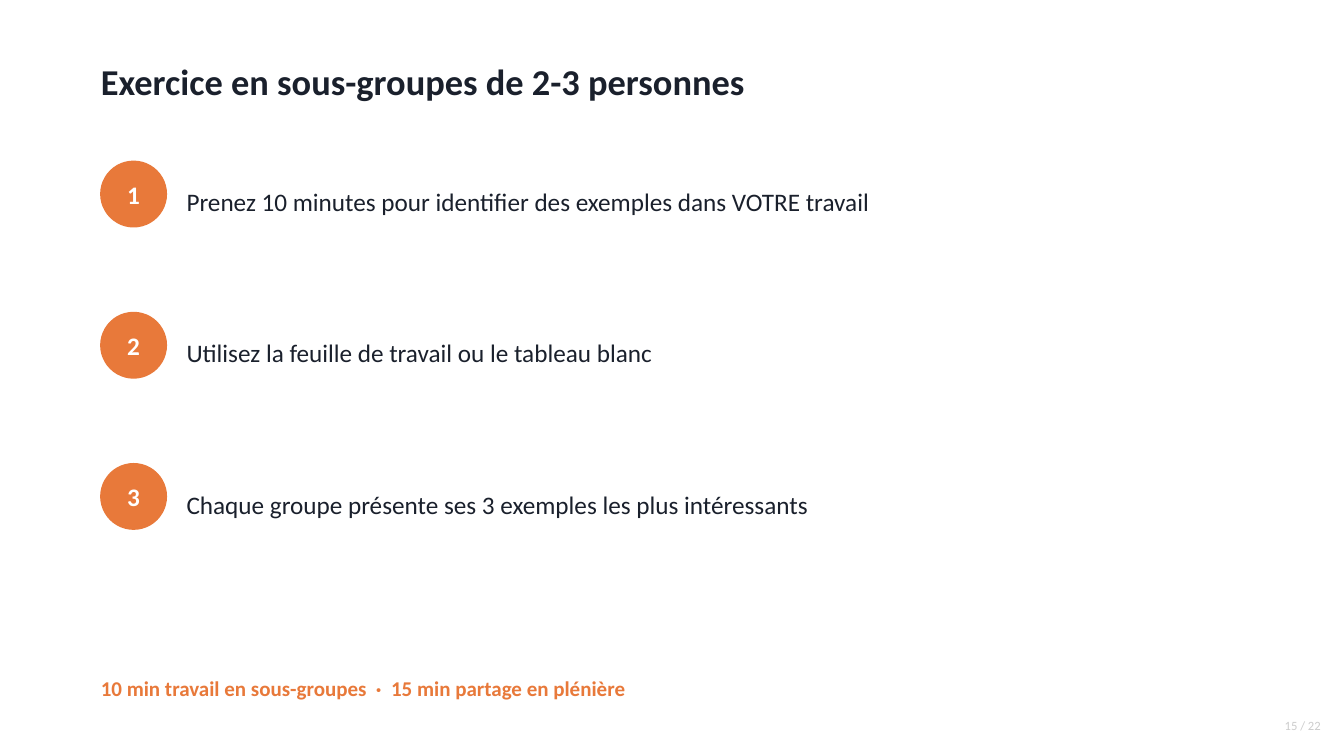
from dataclasses import dataclass

from pptx import Presentation
from pptx import util as u
from pptx.dml import color
from pptx.enum import shapes, text


@dataclass(frozen=True)
class Theme:
    font: str = "Calibri"
    ink: str = "1A202C"
    accent: str = "E8793A"
    white: str = "FFFFFF"
    pale: str = "CCCCCC"
    title: int = 26
    body: int = 18
    note: int = 15
    small: int = 9


THEME = Theme()
ALIGN = text.PP_ALIGN
STEPS = [
    "Prenez 10 minutes pour identifier des exemples dans VOTRE travail",
    "Utilisez la feuille de travail ou le tableau blanc",
    "Chaque groupe présente ses 3 exemples les plus intéressants",
]


def write(shape, words, size, tint, bold=False, align=ALIGN.LEFT):
    frame = shape.text_frame
    frame.word_wrap = True
    frame.auto_size = text.MSO_AUTO_SIZE.NONE
    frame.vertical_anchor = text.MSO_ANCHOR.MIDDLE
    frame.margin_left = frame.margin_right = 0
    frame.margin_top = frame.margin_bottom = 0
    para = frame.paragraphs[0]
    para.alignment = align
    run = para.add_run()
    run.text = words
    font = run.font
    font.name = THEME.font
    font.size = u.Pt(size)
    font.bold = bold
    font.color.rgb = color.RGBColor.from_string(tint)


def label(slide, box, *args, **style):
    shape = slide.shapes.add_textbox(*map(u.Inches, box))
    write(shape, *args, **style)


def head(slide, box, words):
    title = slide.shapes.title
    title.left, title.top, title.width, title.height = map(u.Inches, box)
    write(title, words, THEME.title, THEME.ink, bold=True)


def badge(slide, box, words):
    disc = slide.shapes.add_shape(shapes.MSO_SHAPE.OVAL, *map(u.Inches, box))
    disc.shadow.inherit = False
    tint = color.RGBColor.from_string(THEME.accent)
    disc.fill.solid()
    disc.fill.fore_color.rgb = tint
    disc.line.color.rgb = tint
    disc.line.width = u.Pt(1)
    write(disc, words, THEME.body, THEME.white, bold=True, align=ALIGN.CENTER)


def step(slide, box, number, words):
    left, top, width, height = box
    size, gap = 0.65, 0.2
    shift = size + gap
    badge(slide, (left, top, size, size), str(number))
    label(slide, (left + shift, top, width - shift, height),
          words, THEME.body, THEME.ink)


def steps(slide, box, items):
    left, top, width, height = box
    pitch = height / len(items)
    for index, words in enumerate(items):
        row = (left, top + index * pitch, width, 0.8)
        step(slide, row, index + 1, words)


def main():
    deck = Presentation()
    deck.slide_width = u.Inches(13.33)
    deck.slide_height = u.Inches(7.5)
    slide = deck.slides.add_slide(deck.slide_layouts.get_by_name("Title Only"))
    left, width = 1, 11.3
    head(slide, (left, 0.45, width, 0.7),
         "Exercice en sous-groupes de 2-3 personnes")
    steps(slide, (left, 1.6, width, 4.5), STEPS)
    label(slide, (left, 6.6, width, 0.45),
          "10 min travail en sous-groupes  ·  15 min partage en plénière",
          THEME.note, THEME.accent, bold=True)
    label(slide, (12.1, 7.05, 1, 0.3), "15 / 22",
          THEME.small, THEME.pale, align=ALIGN.RIGHT)
    deck.save("out.pptx")


if __name__ == "__main__":
    main()
